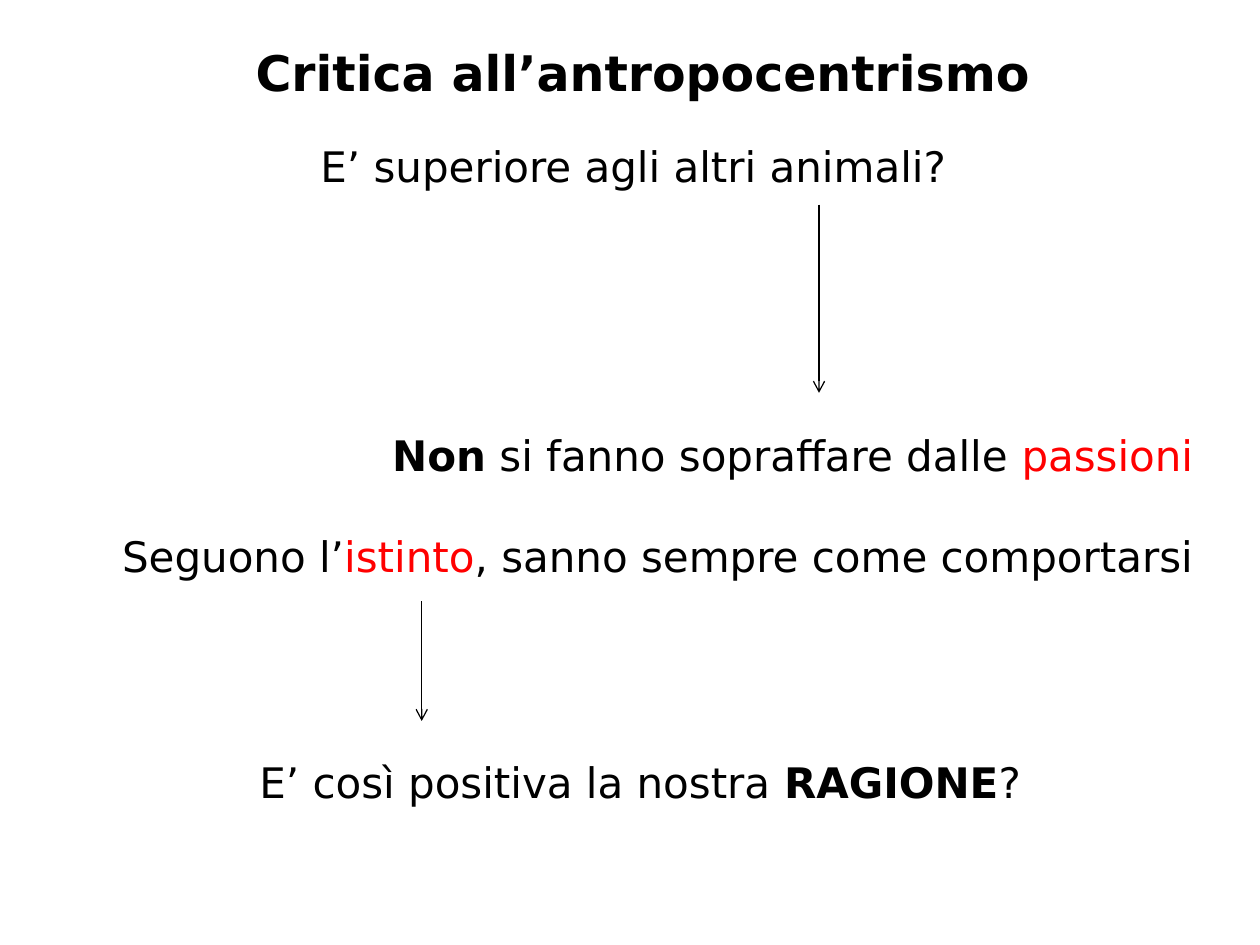
from lxml import etree
from pptx import Presentation
from pptx.dml.color import RGBColor
from pptx.enum import shapes, text
from pptx.oxml import ns
from pptx.util import Pt

COLORS = {"black": "000000", "red": "FF0000", "white": "FFFFFF"}
FONT = "DejaVu Sans"
LEFT, WIDTH = 42.5, 646.5
CENTER, RIGHT = text.PP_ALIGN.CENTER, text.PP_ALIGN.RIGHT

presentation = Presentation()
presentation.slide_width, presentation.slide_height = Pt(720), Pt(540)
slide = presentation.slides.add_slide(presentation.slide_layouts[6])
slide.background.fill.solid()
slide.background.fill.fore_color.rgb = RGBColor.from_string(COLORS["white"])


def add_text(left, top, width, height, paragraphs, size=24, align=None, wrap=True):
    frame = slide.shapes.add_textbox(Pt(left), Pt(top), Pt(width), Pt(height)).text_frame
    frame.word_wrap = wrap
    frame.auto_size = text.MSO_AUTO_SIZE.SHAPE_TO_FIT_TEXT
    for index, runs in enumerate(paragraphs):
        paragraph = frame.add_paragraph() if index else frame.paragraphs[0]
        paragraph.alignment = align
        paragraph.space_before = Pt(29 if index else 0)
        paragraph.font.name = FONT
        paragraph.font.size = Pt(size)
        for words, color, bold in runs:
            run = paragraph.add_run()
            run.text = words
            run.font.bold = bold
            run.font.color.rgb = RGBColor.from_string(COLORS[color])


title = [("Critica all’antropocentrismo", "black", True)]
question = [("E’ superiore agli altri animali? ", "black", False)]
passions = [
    ("Non", "black", True),
    (" si fanno sopraffare dalle ", "black", False),
    ("passioni", "red", False),
]
instinct = [
    ("Seguono l’", "black", False),
    ("istinto", "red", False),
    (", sanno sempre come comportarsi", "black", False),
]
reason = [
    ("E’ così positiva la nostra ", "black", False),
    ("RAGIONE", "black", True),
    ("?", "black", False),
]

add_text(139, 21, 457, 41, [title], size=28, wrap=False)
add_text(LEFT, 77, WIDTH, 36, [question], align=CENTER)
add_text(LEFT, 242, WIDTH, 94.5, [passions, instinct], align=RIGHT)
add_text(LEFT, 428.5, WIDTH, 36, [reason], align=CENTER)

for x, top, bottom in [(468, 117, 224.5), (241, 343.5, 412)]:
    arrow = slide.shapes.add_connector(
        shapes.MSO_CONNECTOR.STRAIGHT, Pt(x), Pt(top), Pt(x), Pt(bottom)
    )
    arrow.line.width = Pt(0.75)
    arrow.line.color.rgb = RGBColor.from_string(COLORS["black"])
    etree.SubElement(arrow.line._get_or_add_ln(), ns.qn("a:tailEnd"), type="arrow")
    etree.SubElement(arrow._element.spPr, ns.qn("a:effectLst"))

presentation.save("out.pptx")
